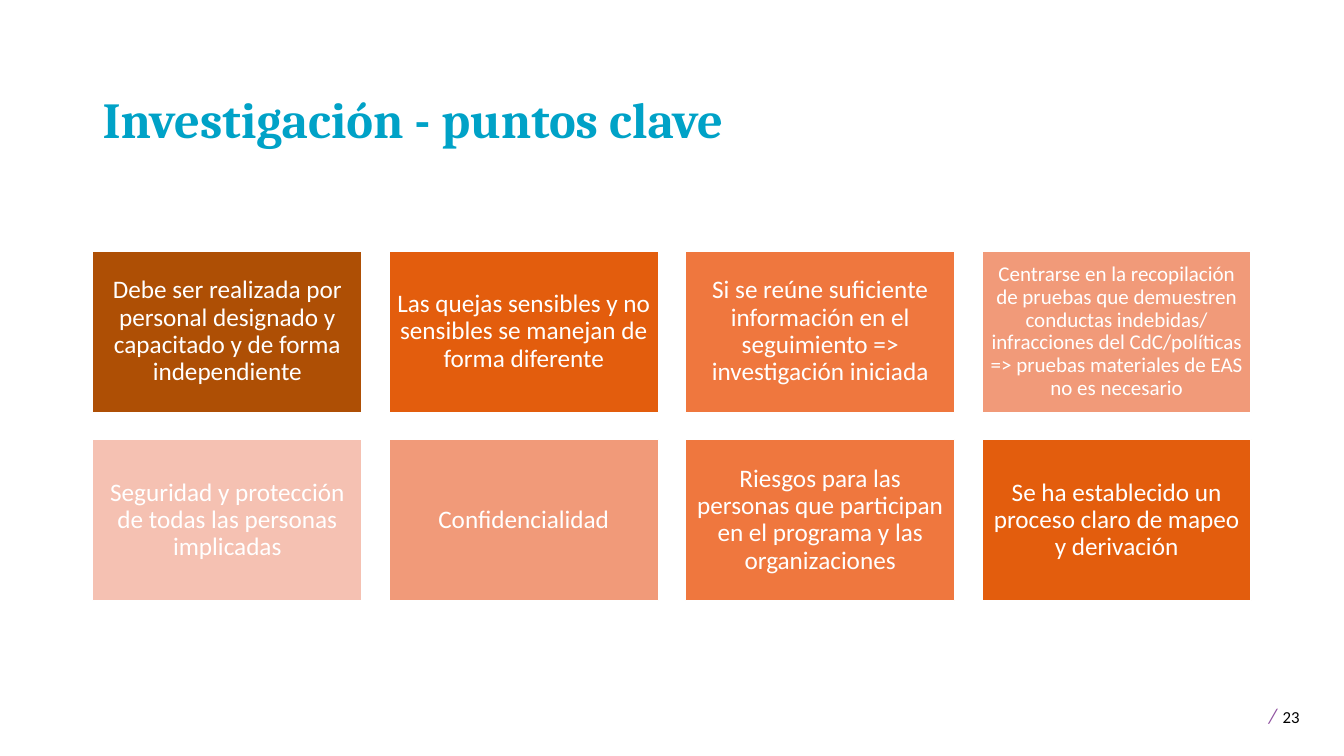
from pptx import Presentation
from pptx.dml.color import RGBColor
from pptx.enum.shapes import MSO_SHAPE as Shape
from pptx.enum.text import MSO_ANCHOR as Anchor, PP_ALIGN as Align
from pptx.util import Inches, Pt

# Content
TITLE = "Investigación - puntos clave"
# (text, fill, text size, inset)
KEY_POINTS = [
    ("Debe ser realizada por personal designado y capacitado y de forma independiente",
     "AE4F05", 18, 0.07),
    ("Las quejas sensibles y no sensibles se manejan de forma diferente",
     "E35D0D", 18, 0.07),
    ("Si se reúne suficiente información en el seguimiento => investigación iniciada",
     "EF773E", 18, 0.07),
    ("Centrarse en la recopilación de pruebas que demuestren conductas indebidas/ "
     "infracciones del CdC/políticas => pruebas materiales de EAS no es necesario",
     "F19A79", 15, 0.06),
    ("Seguridad y protección de todas las personas implicadas", "F5C1B2", 18, 0.07),
    ("Confidencialidad", "F19A79", 18, 0.07),
    ("Riesgos para las personas que participan en el programa y las organizaciones",
     "EF773E", 18, 0.07),
    ("Se ha establecido un proceso claro de mapeo y derivación", "E35D0D", 18, 0.07),
]
# (text, size, colour, italic)
PAGE_MARK = [(" ", 18, "000000", False), ("/", 15, "9053A1", True),
             (" ", 18, "000000", False), ("23", 12, "000000", False)]

# Grid, in inches
LEFT, TOP, COLUMNS = 0.92, 2.49, 4
CARD_W, CARD_H, GAP = 2.67, 1.6, 0.27


def color(value):
    return RGBColor.from_string(value)


def add_run(paragraph, text, size, ink, font="Calibri", bold=False, italic=False):
    run = paragraph.add_run()
    run.text = text
    run.font.name, run.font.size = font, Pt(size)
    run.font.bold, run.font.italic = bold, italic
    run.font.color.rgb = color(ink)


def set_frame(shape, anchor, inset_x, inset_y):
    frame = shape.text_frame
    frame.word_wrap = True
    frame.vertical_anchor = anchor
    frame.margin_left = frame.margin_right = Inches(inset_x)
    frame.margin_top = frame.margin_bottom = Inches(inset_y)
    return frame.paragraphs[0]


def add_text(slide, at, anchor):
    box = slide.shapes.add_textbox(*map(Inches, at))
    return set_frame(box, anchor, 0.1, 0.05)


def add_card(slide, index, text, fill, size, inset):
    row, column = divmod(index, COLUMNS)
    at = (LEFT + column * (CARD_W + GAP), TOP + row * (CARD_H + GAP), CARD_W, CARD_H)
    card = slide.shapes.add_shape(Shape.RECTANGLE, *map(Inches, at))
    card.shadow.inherit = False
    card.fill.solid()
    card.fill.fore_color.rgb = color(fill)
    card.line.color.rgb = color("FFFFFF")
    card.line.width = Pt(1)
    point = set_frame(card, Anchor.MIDDLE, inset, inset)
    point.alignment, point.line_spacing = Align.CENTER, 0.9
    add_run(point, text, size, "FFFFFF")


def main():
    deck = Presentation()
    deck.slide_width, deck.slide_height = Inches(13.33), Inches(7.5)
    slide = deck.slides.add_slide(deck.slide_layouts[6])

    # Page number
    page = add_text(slide, (12.43, 6.88, 0.87, 0.4), Anchor.TOP)
    for text, size, ink, italic in PAGE_MARK:
        add_run(page, text, size, ink, italic=italic)

    # Cards
    for index, point in enumerate(KEY_POINTS):
        add_card(slide, index, *point)

    # Title
    title = add_text(slide, (LEFT, 0.4, 11.5, 1.13), Anchor.BOTTOM)
    title.line_spacing = 0.9
    add_run(title, TITLE, 36, "00A2C7", font="Cambria", bold=True)

    deck.save("out.pptx")


if __name__ == "__main__":
    main()
